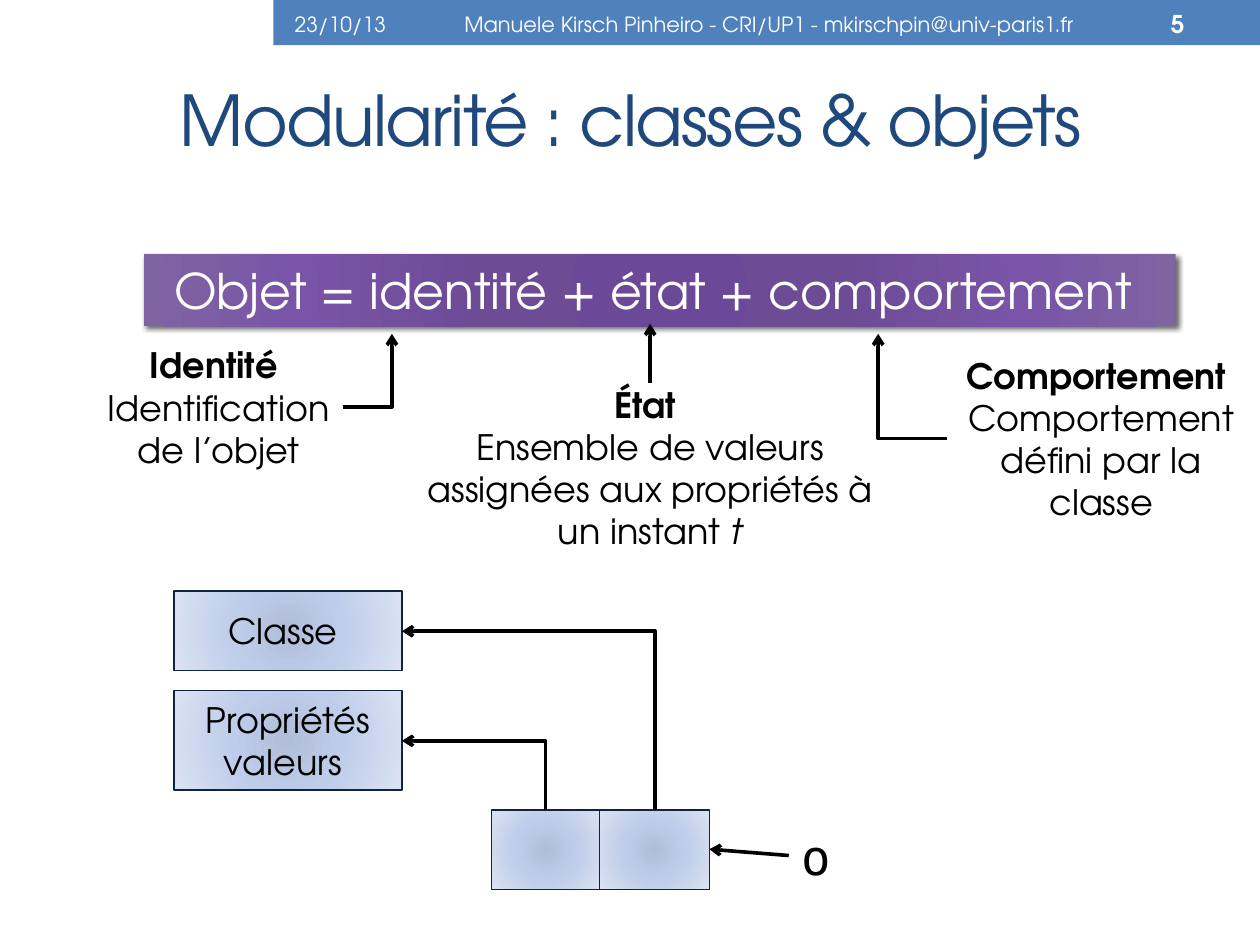
from lxml import etree
from pptx import Presentation, util as u
from pptx.dml.color import RGBColor
from pptx.enum import shapes, text
from pptx.oxml import parse_xml
from pptx.oxml.ns import nsdecls, qn

WHITE = RGBColor(0xFF, 0xFF, 0xFF)
BLACK = RGBColor(0, 0, 0)
BAND_BLUE = RGBColor(0x4F, 0x81, 0xBD)
TITLE_BLUE = RGBColor(0x1F, 0x49, 0x7D)
EDGE_NAVY = RGBColor(0x0F, 0x24, 0x3E)
PALE_BLUES = [(0, RGBColor(0xB0, 0xBE, 0xD9)), (45, RGBColor(0xBE, 0xCD, 0xEA)),
              (100, RGBColor(0xDB, 0xE3, 0xF3))]
PURPLES = [(0, RGBColor(0x6C, 0x48, 0x98)), (34, RGBColor(0x6D, 0x4B, 0x95)),
           (70, RGBColor(0x79, 0x54, 0xA7)), (100, RGBColor(0x80, 0x64, 0xA2))]
SANS, MONO = "TeX Gyre Adventor", "DejaVu Sans Mono"
CENTER, LEFT, RIGHT = text.PP_ALIGN.CENTER, text.PP_ALIGN.LEFT, text.PP_ALIGN.RIGHT
MIDDLE, TOP = text.MSO_ANCHOR.MIDDLE, text.MSO_ANCHOR.TOP
RECT = shapes.MSO_SHAPE.RECTANGLE

deck = Presentation()
deck.slide_width, deck.slide_height = u.Inches(10), u.Inches(7.5)
COL, ROW = deck.slide_width / 100, deck.slide_height / 75  # 100 x 75 grid
slide = deck.slides.add_slide(deck.slide_layouts[5])
items = slide.shapes


def grid(*numbers):
    """Turn alternating columns and rows into slide lengths."""
    return [round(n * (ROW if i % 2 else COL)) for i, n in enumerate(numbers)]


def write(shape, paragraphs, size, color, align=CENTER, anchor=MIDDLE, font=SANS, **frame_format):
    """Fill a shape with paragraphs, each a list of (words, font settings)."""
    frame = shape.text_frame
    for key, value in {"word_wrap": True, "vertical_anchor": anchor, **frame_format}.items():
        setattr(frame, key, value)
    for i, runs in enumerate(paragraphs):
        paragraph = frame.paragraphs[0] if i == 0 else frame.add_paragraph()
        paragraph.alignment = align
        for words, settings in runs:
            run = paragraph.add_run()
            run.text = words
            run.font.color.rgb = color
            for key, value in {"name": font, "size": u.Pt(size), **settings}.items():
                setattr(run.font, key, value)


# Header band
band = items.add_shape(RECT, *grid(21.7, 0, 78.3, 3.6))
band.shadow.inherit = False
band.fill.solid()
band.fill.fore_color.rgb = BAND_BLUE
band.line.fill.background()
for left, width, words, size, align, bold in [
    (22.4, 11.8, "23/10/13", 12, LEFT, False),
    (33.5, 55.1, "Manuele Kirsch Pinheiro - CRI/UP1 - mkirschpin@univ-paris1.fr", 12, CENTER, False),
    (89.4, 5.6, "5", 14, RIGHT, True),
]:
    write(items.add_textbox(*grid(left, 0.2, width, 3.4)), [[(words, {"bold": bold})]],
          size, WHITE, align)

title = items.title
title.left, title.top, title.width, title.height = grid(5.1, 4.4, 89.9, 10)
write(title, [[("Modularité : classes & objets", {})]], 40, TITLE_BLUE)
title.text_frame.paragraphs[0].runs[0].font._element.set("spc", "-100")

# Gradient boxes: the two halves of the object, what they refer to, and the formula
for place, words, stops, size, color, anchor in [
    ((39, 64.3, 8.7, 6.3), "", PALE_BLUES, 20, BLACK, MIDDLE),
    ((47.6, 64.3, 8.7, 6.3), "", PALE_BLUES, 20, BLACK, MIDDLE),
    ((13.8, 46.9, 18.1, 6.3), "Classe ", PALE_BLUES, 20, BLACK, MIDDLE),
    ((13.8, 54.8, 18.1, 7.9), "Propriétés valeurs ", PALE_BLUES, 20, BLACK, MIDDLE),
    ((11.4, 20.2, 81.9, 5.7), "Objet = identité + état + comportement ", PURPLES, 28, WHITE, TOP),
]:
    box = items.add_shape(RECT, *grid(*place))
    box.shadow.inherit = False
    stop_xml = "".join(f'<a:gs pos="{pos * 1000}"><a:srgbClr val="{tone}"/></a:gs>'
                       for pos, tone in stops)
    box._element.spPr.find(qn("a:prstGeom")).addnext(parse_xml(
        f'<a:gradFill {nsdecls("a")} rotWithShape="1"><a:gsLst>{stop_xml}</a:gsLst>'
        '<a:path path="circle"><a:fillToRect l="100000" t="100000" r="100000" b="100000"/>'
        '</a:path></a:gradFill>'))
    if stops is PURPLES:
        box.line.fill.background()
        box._element.spPr.find(qn("a:effectLst")).append(parse_xml(
            f'<a:outerShdw {nsdecls("a")} blurRad="{u.Pt(3)}" dist="{u.Pt(2)}" dir="2700000" '
            'algn="tl" rotWithShape="0"><a:srgbClr val="000000"><a:alpha val="60000"/>'
            '</a:srgbClr></a:outerShdw>'))
    else:
        box.line.color.rgb = EDGE_NAVY
        box.line.width = u.Pt(0.75)
    if words:
        write(box, [[(words, {})]], size, color, anchor=anchor)

write(items.add_textbox(*grid(62.6, 65.1, 4.7, 5.7)), [[("o", {})]], 28, BLACK, LEFT, TOP, MONO,
      word_wrap=False)

# Explanations of the three terms
for place, term, meaning in [
    ((7.5, 27.3, 19.7, 10.1), "Identité ", [("Identification de l’objet", {})]),
    ((75.2, 28.1, 24.4, 13.5), "Comportement ", [("Comportement défini par la classe", {})]),
    ((33.5, 30.4, 36.2, 13.5), "État ",
     [("Ensemble de valeurs assignées aux propriétés à un instant ", {}), ("t", {"italic": True})]),
]:
    write(items.add_textbox(*grid(*place)), [[(term, {"bold": True})], meaning], 20, BLACK,
          anchor=TOP, margin_left=0, margin_right=0, margin_top=0, margin_bottom=0)

# Arrows; a bent one runs across first, then up or down
for ends, bent, arrow_end in [
    ((31.9, 50.1, 52, 64.3), True, "headEnd"),
    ((31.9, 58.8, 43.3, 64.3), True, "headEnd"),
    ((62.6, 67.9, 56.3, 67.4), False, "tailEnd"),
    ((75.2, 34.8, 69.7, 26.5), True, "tailEnd"),
    ((27.2, 32.3, 31.1, 26.5), True, "tailEnd"),
    ((51.6, 30.4, 51.6, 25.7), False, "tailEnd"),
]:
    arrow = items.add_connector(shapes.MSO_CONNECTOR.STRAIGHT, *grid(*ends))
    arrow.line.color.rgb = BLACK
    arrow.line.width = u.Pt(2.08)
    properties = arrow._element.spPr
    if bent:
        properties.find(qn("a:prstGeom")).set("prst", "bentConnector2")
    etree.SubElement(properties.find(qn("a:ln")), qn(f"a:{arrow_end}"), type="arrow")
    etree.SubElement(properties, qn("a:effectLst"))

deck.save("out.pptx")
